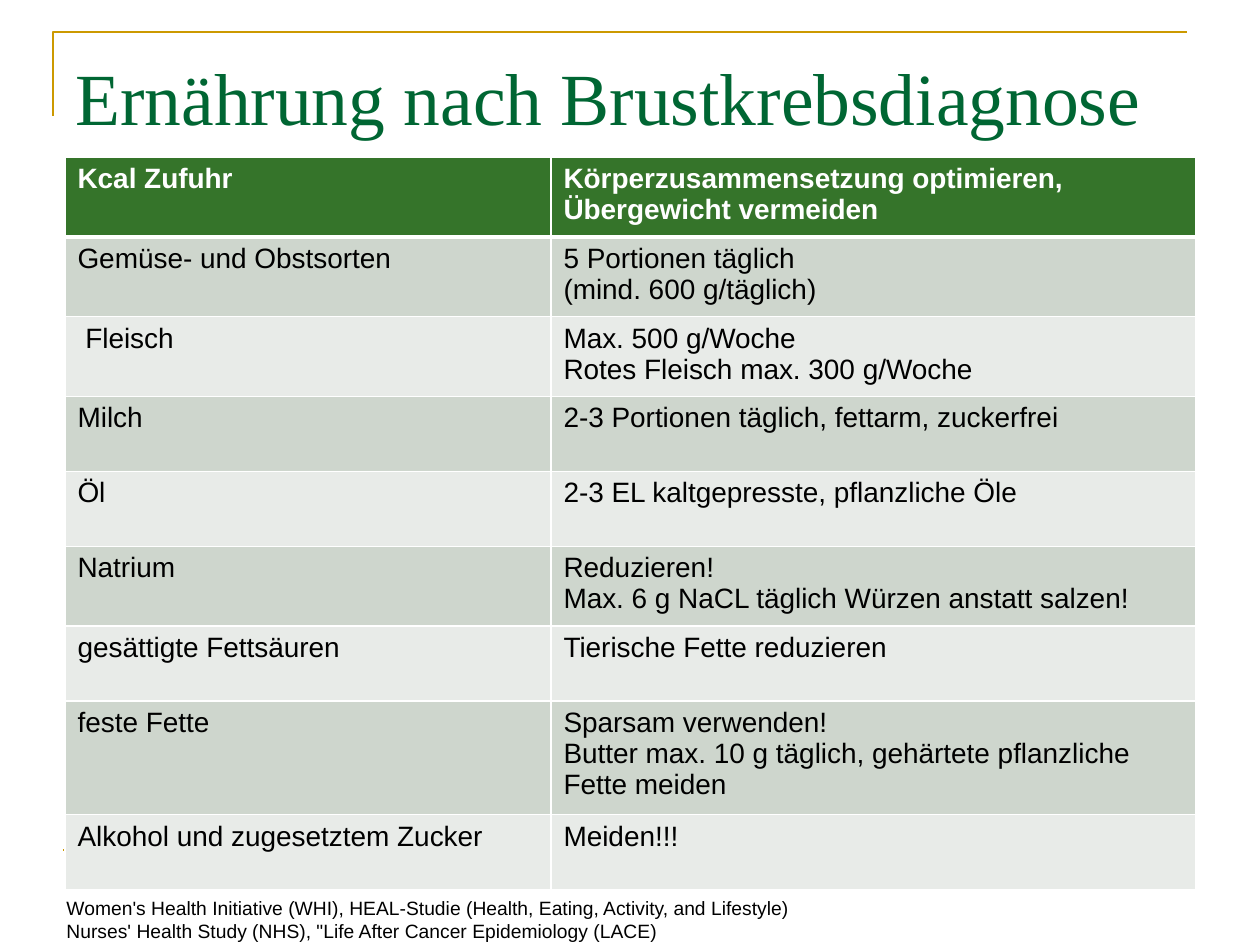
from lxml.etree import SubElement
from pptx import Presentation
from pptx.dml.color import RGBColor
from pptx.enum.shapes import MSO_CONNECTOR
from pptx.enum.text import MSO_ANCHOR
from pptx.oxml.ns import qn
from pptx.util import Pt

PX = 914400 // 126


def rgb(value):
    return RGBColor.from_string(value)


def write(tf, text, size, font, color, bold=False):
    tf.text = text
    tf.word_wrap = True
    for p in tf.paragraphs:
        for r in p.runs:
            r.font.size = Pt(size)
            r.font.name = font
            r.font.bold = bold
            r.font.color.rgb = rgb(color)


prs = Presentation()
prs.slide_width = 1260 * PX
prs.slide_height = 945 * PX
s = prs.slides.add_slide(prs.slide_layouts[6])

builder = s.shapes.build_freeform(53, 116, scale=PX)
builder.add_line_segments([(53, 32), (1187, 32)], close=False)
corner = builder.convert_to_shape()
corner.fill.background()
corner.shadow.inherit = False

rule = s.shapes.add_connector(MSO_CONNECTOR.STRAIGHT, 63 * PX, 850 * PX, 1197 * PX, 850 * PX)
SubElement(rule._element.spPr, qn("a:effectLst"))
for sp in (corner, rule):
    sp.line.color.rgb = rgb("CC9900")
    sp.line.width = Pt(1.5)
rule._element.spPr.append(rule._element.spPr.find(qn("a:effectLst")))

title = s.shapes.add_textbox(63 * PX, 38 * PX, 1134 * PX, 157 * PX)
title.text_frame.margin_top = 14 * PX
title.text_frame.vertical_anchor = MSO_ANCHOR.TOP
write(title.text_frame, "Ernährung nach Brustkrebsdiagnose", 42, "Times New Roman", "006633")

rows = [
    ("Kcal Zufuhr", "Körperzusammensetzung optimieren, Übergewicht vermeiden"),
    ("Gemüse- und Obstsorten", "5 Portionen täglich \v(mind. 600 g/täglich)"),
    (" Fleisch", "Max. 500 g/Woche \vRotes Fleisch max. 300 g/Woche"),
    ("Milch", "2-3 Portionen täglich, fettarm, zuckerfrei"),
    ("Öl", "2-3 EL kaltgepresste, pflanzliche Öle"),
    ("Natrium", "Reduzieren!\vMax. 6 g NaCL täglich Würzen anstatt salzen!"),
    ("gesättigte Fettsäuren", "Tierische Fette reduzieren"),
    ("feste Fette", "Sparsam verwenden!\nButter max. 10 g täglich, gehärtete pflanzliche Fette meiden"),
    ("Alkohol und zugesetztem Zucker", "Meiden!!!"),
]
heights = [75] * 7 + [105, 75]
table = s.shapes.add_table(len(rows), 2, 65 * PX, 157 * PX, 1131 * PX, sum(heights) * PX).table
for column, width in zip(table.columns, (486, 645)):
    column.width = width * PX

for i, (texts, height) in enumerate(zip(rows, heights)):
    table.rows[i].height = height * PX
    header = i == 0
    fill = "35742A" if header else ("E8EBE8", "CED6CD")[i % 2]
    for j, text in enumerate(texts):
        cell = table.cell(i, j)
        write(cell.text_frame, text, 16, "Arial", "FFFFFF" if header else "000000", header)
        tcPr = cell._tc.get_or_add_tcPr()
        for side in ("lnL", "lnR", "lnT", "lnB"):
            thick = (header and side == "lnB") or (i == 1 and side == "lnT")
            ln = SubElement(tcPr, qn(f"a:{side}"), w=str(Pt(3 if thick else 1)))
            SubElement(SubElement(ln, qn("a:solidFill")), qn("a:srgbClr"), val="FFFFFF")
        cell.fill.solid()
        cell.fill.fore_color.rgb = rgb(fill)

footer = s.shapes.add_textbox(54 * PX, 890 * PX, 1181 * PX, 59 * PX)
write(
    footer.text_frame,
    "Women's Health Initiative (WHI), HEAL-Studie (Health, Eating, Activity, and Lifestyle)\n"
    "Nurses' Health Study (NHS), \"Life After Cancer Epidemiology (LACE)",
    11, "Arial", "000000",
)

prs.save("out.pptx")
